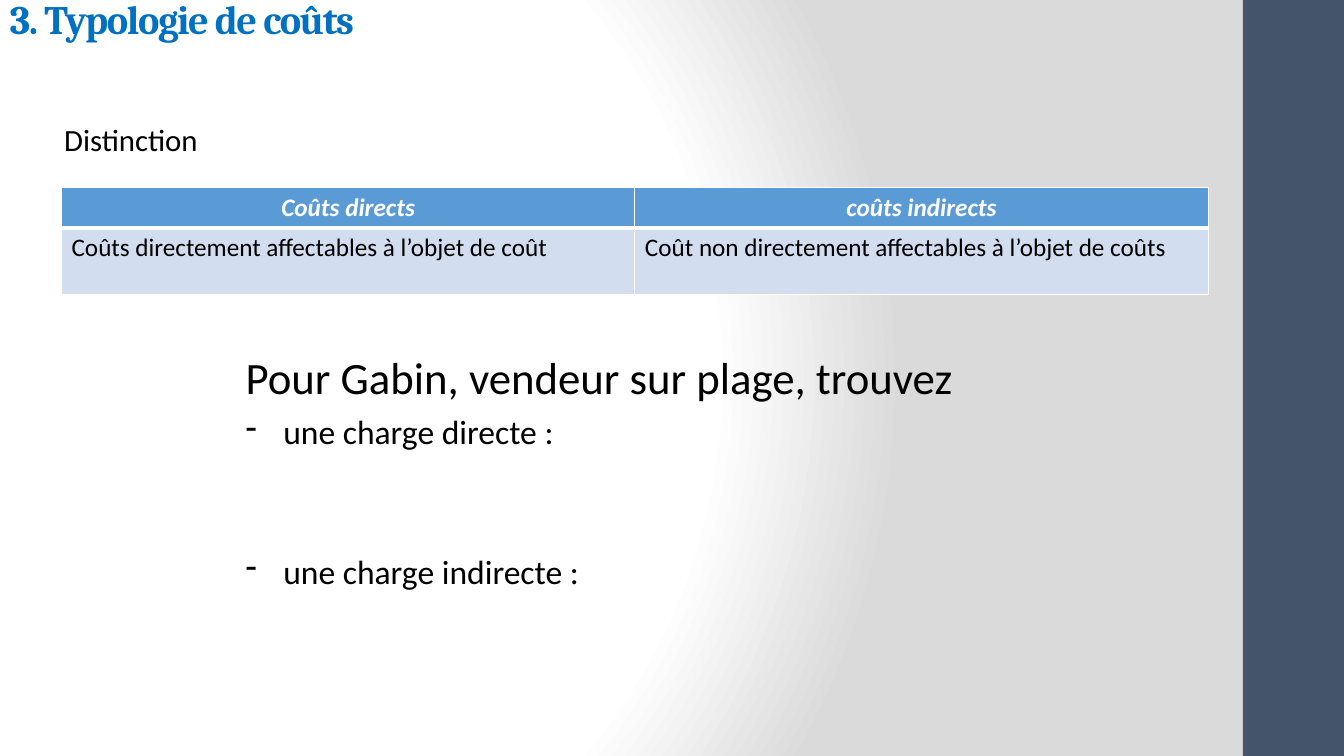
import pptx
import pptx.util
import pptx.dml.color
import pptx.enum.shapes
import pptx.enum.text
import pptx.oxml
import pptx.oxml.ns
import lxml.etree

Cm = pptx.util.Cm
Pt = pptx.util.Pt
RGBColor = pptx.dml.color.RGBColor
PP_ALIGN = pptx.enum.text.PP_ALIGN
qn = pptx.oxml.ns.qn

NAVY = RGBColor(0x44, 0x54, 0x6A)
TITLE_BLUE = RGBColor(0x00, 0x70, 0xC0)
HEADER_BLUE = RGBColor(0x5B, 0x9B, 0xD5)
PALE_BLUE = RGBColor(0xD2, 0xDE, 0xEF)
WHITE = RGBColor(0xFF, 0xFF, 0xFF)
BLACK = RGBColor(0x00, 0x00, 0x00)


def write(paragraph, text, color, **font_format):
    run = paragraph.add_run()
    run.text = text
    run.font.color.rgb = color
    for name, value in {"name": "Calibri", **font_format}.items():
        setattr(run.font, name, value)
    return run


def add_text_frame(left, top, width, height):
    frame = slide.shapes.add_textbox(Cm(left), Cm(top), Cm(width), Cm(height)).text_frame
    frame.word_wrap = True
    return frame


presentation = pptx.Presentation()
presentation.slide_width = Cm(33.87)
presentation.slide_height = Cm(19.05)
slide = presentation.slides.add_slide(presentation.slide_layouts[6])

slide.background.fill.solid()
background = slide.element.find(".//" + qn("p:bgPr"))
background.replace(background[0], pptx.oxml.parse_xml(
    '<a:gradFill xmlns:a="http://schemas.openxmlformats.org/drawingml/2006/main" rotWithShape="1"><a:gsLst>'
    '<a:gs pos="0"><a:srgbClr val="FFFFFF"/></a:gs>'
    '<a:gs pos="75000"><a:srgbClr val="FFFFFF"/></a:gs>'
    '<a:gs pos="100000"><a:srgbClr val="DADADA"/></a:gs></a:gsLst>'
    '<a:path path="circle"><a:fillToRect l="20000" t="50000" r="100000" b="50000"/></a:path>'
    '</a:gradFill>'))

side_band = slide.shapes.add_shape(
    pptx.enum.shapes.MSO_SHAPE.RECTANGLE, Cm(31.32), 0, Cm(2.55), Cm(19.05))
side_band.shadow.inherit = False
side_band.fill.solid()
side_band.fill.fore_color.rgb = NAVY
side_band.line.fill.background()

title = add_text_frame(0, 0, 22.86, 2.36)
title.margin_top = 0
title.paragraphs[0].line_spacing = 0.9
heading = write(title.paragraphs[0], "3. Typologie de coûts", TITLE_BLUE,
                name="Cambria", size=Pt(28.8), bold=True)
heading.font._element.set("spc", "-100")

distinction = add_text_frame(1.37, 2.92, 29.92, 1.4)
write(distinction.paragraphs[0], "Distinction", BLACK, size=Pt(22))

cost_rows = [
    (("Coûts directs", "coûts indirects"), 1.02, HEADER_BLUE, WHITE, PP_ALIGN.CENTER, True, 3),
    (("Coûts directement affectables à l’objet de coût",
      "Coût non directement affectables à l’objet de coûts"),
     1.68, PALE_BLUE, BLACK, PP_ALIGN.JUSTIFY, False, 1),
]
costs = slide.shapes.add_table(2, 2, Cm(1.55), Cm(4.72), Cm(28.9), Cm(2.7)).table
for row, (texts, height, fill, color, align, emphasis, bottom) in enumerate(cost_rows):
    costs.rows[row].height = Cm(height)
    for column, text in enumerate(texts):
        cell = costs.cell(row, column)
        paragraph = cell.text_frame.paragraphs[0]
        paragraph.alignment = align
        write(paragraph, text, color, size=Pt(18), bold=emphasis, italic=emphasis)
        properties = cell._tc.get_or_add_tcPr()
        top = 1 if row == 0 else 3
        for side, width in {"lnL": 1, "lnR": 1, "lnT": top, "lnB": bottom}.items():
            border = lxml.etree.SubElement(properties, qn("a:" + side), w=str(Pt(width)))
            line_fill = lxml.etree.SubElement(border, qn("a:solidFill"))
            lxml.etree.SubElement(line_fill, qn("a:srgbClr"), val=str(WHITE))
        cell.fill.solid()
        cell.fill.fore_color.rgb = fill

exercise = add_text_frame(5.94, 8.7, 22.86, 9.65)
write(exercise.paragraphs[0], "Pour Gabin, vendeur sur plage, trouvez", BLACK, size=Pt(32))
for question, space in (("une charge directe :", 5), ("une charge indirecte :", 71)):
    paragraph = exercise.add_paragraph()
    paragraph.space_before = Pt(space)
    bullet_properties = paragraph._p.get_or_add_pPr()
    bullet_properties.set("marL", str(Cm(0.95)))
    bullet_properties.set("indent", str(Cm(-0.95)))
    lxml.etree.SubElement(bullet_properties, qn("a:buChar"), char="-")
    write(paragraph, question, BLACK, size=Pt(24))

presentation.save("out.pptx")
